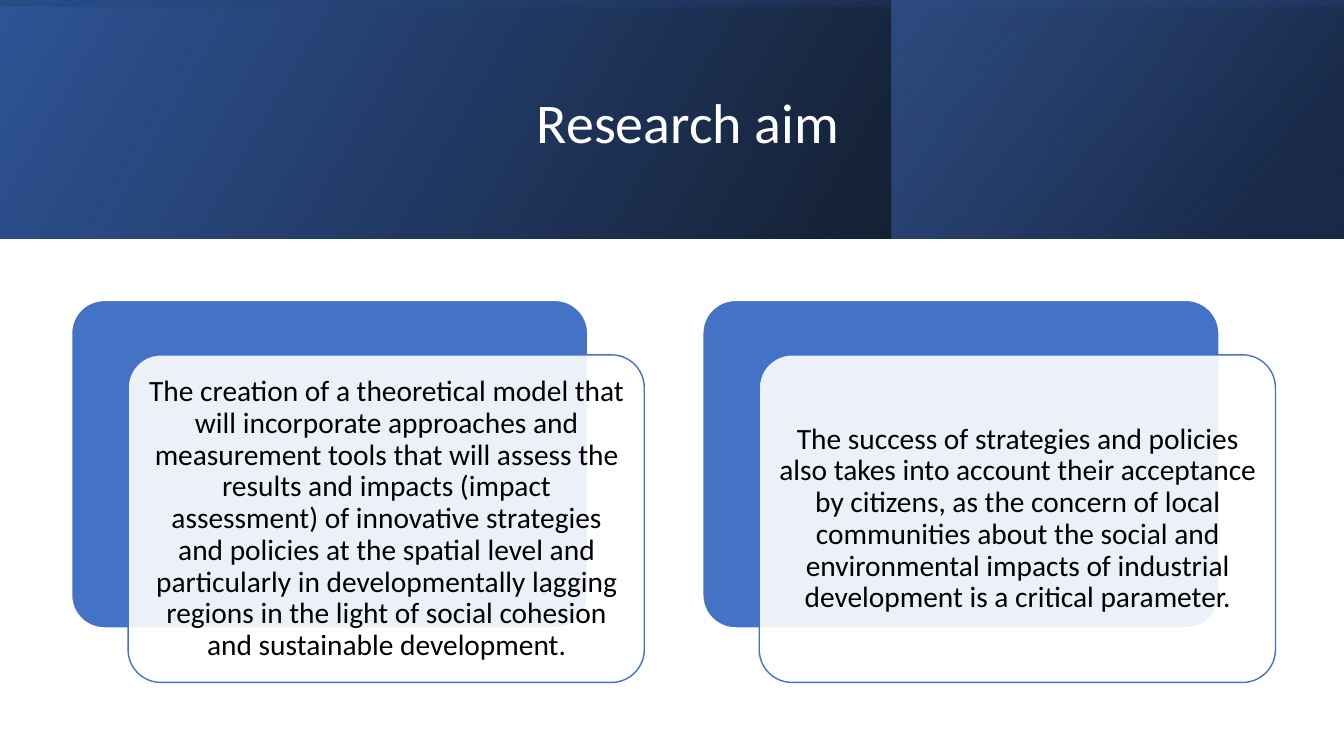
import pptx
import pptx.util
import pptx.dml.color
import pptx.enum.shapes
import pptx.enum.text
import pptx.oxml.ns
import lxml.etree

Inches, Pt = pptx.util.Inches, pptx.util.Pt
RGB = pptx.dml.color.RGBColor.from_string
KIND = pptx.enum.shapes.MSO_SHAPE
qn = pptx.oxml.ns.qn

COLORS = {"black": "000000", "white": "FFFFFF", "navy": "203864",
          "deep": "2F5597", "blue": "4472C4"}

deck = pptx.Presentation()
deck.slide_width, deck.slide_height = Inches(13.33), Inches(7.5)
slide = deck.slides.add_slide(deck.slide_layouts[5])
shapes = slide.shapes


def fade(shape, *alphas):
    """Set the opacity, in percent, of the fill colours in order."""
    tints = list(shape.element.spPr.iter(qn("a:srgbClr")))
    for tint, alpha in zip(tints, alphas):
        node = lxml.etree.SubElement(tint, qn("a:alpha"))
        node.set("val", str(alpha * 1000))


def write(shape, text, size, color):
    """Put one centred paragraph in the middle of a shape."""
    frame = shape.text_frame
    frame.word_wrap = True
    frame.vertical_anchor = pptx.enum.text.MSO_ANCHOR.MIDDLE
    para = frame.paragraphs[0]
    para.alignment = pptx.enum.text.PP_ALIGN.CENTER
    para.line_spacing = 0.9
    run = para.add_run()
    run.text = text
    run.font.size = Pt(size)
    run.font.name = "Calibri"
    run.font.color.rgb = RGB(COLORS[color])


# Header bands: box, rotation, angle, then (position, colour, opacity) stops
BANDS = [
    ((0, 0, 13.33, 2.37), 0, 30, [(0, "black", 96), (1, "deep", 100)]),
    ((8.84, 0, 4.48, 2.37), 0, 40, [(0.19, "navy", 68), (1, "blue", 48)]),
    ((5.48, -5.48, 2.37, 13.33), 270, 10,
     [(0.23, "deep", 16), (0.99, "black", 45)]),
]
for box, turn, angle, stops in BANDS:
    band = shapes.add_shape(KIND.RECTANGLE, *map(Inches, box))
    band.shadow.inherit = False
    band.rotation = turn
    band.element.spPr.xfrm.set("flipH", "1")
    band.line.fill.background()
    band.fill.gradient()
    band.fill.gradient_angle = angle
    for stop, (place, color, alpha) in zip(band.fill.gradient_stops, stops):
        stop.position = place
        stop.color.rgb = RGB(COLORS[color])
    fade(band, *[alpha for place, color, alpha in stops])

title = shapes.title
title.left, title.top = Inches(1.51), Inches(0.38)
title.width, title.height = Inches(10.63), Inches(1.72)
write(title, "Research aim", 40, "white")
title.element.getparent().append(title.element)  # in front of the bands

AIMS = [
    "The creation of a theoretical model that will incorporate approaches "
    "and measurement tools that will assess the results and impacts (impact "
    "assessment) of innovative strategies and policies at the spatial level "
    "and particularly in developmentally lagging regions in the light of "
    "social cohesion and sustainable development.",
    "The success of strategies and policies also takes into account their "
    "acceptance by citizens, as the concern of local communities about the "
    "social and environmental impacts of industrial development is a "
    "critical parameter.",
]
LAYERS = [(0.71, 2.98, "blue", "white", 100), (1.27, 3.52, "white", "blue", 90)]
STEP = 6.26

for col, aim in enumerate(AIMS):
    shift = col * STEP
    for left, top, fill, edge, alpha in LAYERS:
        card = shapes.add_shape(KIND.ROUNDED_RECTANGLE, Inches(left + shift),
                                Inches(top), Inches(5.12), Inches(3.25))
        card.adjustments[0] = 0.1
        card.shadow.inherit = False
        card.fill.solid()
        card.fill.fore_color.rgb = RGB(COLORS[fill])
        card.line.color.rgb = RGB(COLORS[edge])
        card.line.width = Pt(1)
        fade(card, alpha)
    note = shapes.add_textbox(Inches(1.37 + shift), Inches(3.62),
                              Inches(4.93), Inches(3.06))
    frame = note.text_frame
    frame.margin_left = frame.margin_right = Inches(0.09)
    frame.margin_top = frame.margin_bottom = Inches(0.09)
    write(note, aim, 21, "black")

deck.save("out.pptx")
